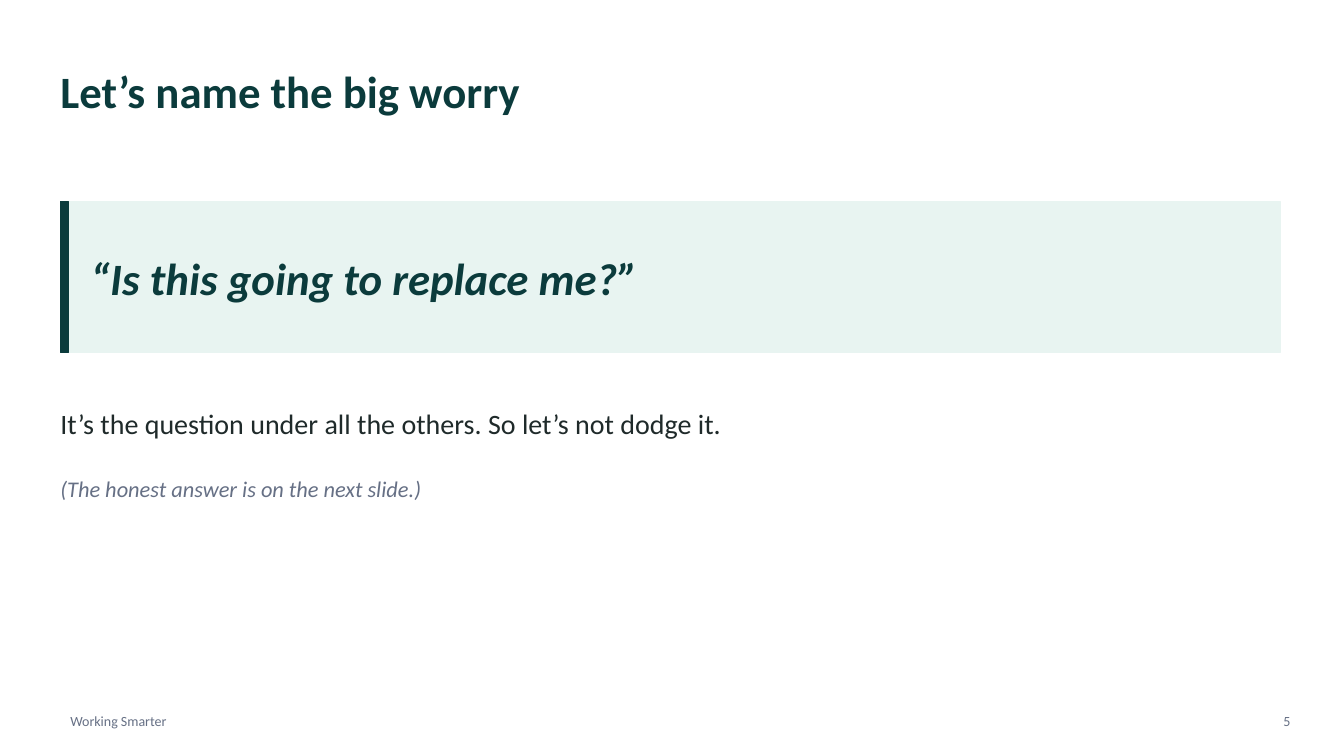
"""Build the slide that names the big worry."""
from dataclasses import dataclass

from pptx import Presentation
from pptx.dml.color import RGBColor
from pptx.enum import shapes, text
from pptx.util import Pt

COLORS = {"dark": "0B3B3C", "pale": "E8F4F1", "ink": "1F2A2A", "muted": "667085"}
LEFT, WIDTH = 43.2, 871.2
QUOTE_TOP, QUOTE_HEIGHT = 144, 108
NO_INSET = (0, 0)
FOOTER_INSET = (7.2, 3.6)


@dataclass(frozen=True)
class Box:
    """A place on the slide, in points."""
    left: float
    top: float
    width: float
    height: float

    def lengths(self) -> list[int]:
        """Return the place as lengths."""
        return [Pt(v) for v in (self.left, self.top, self.width, self.height)]


@dataclass(frozen=True)
class Label:
    """A line of text with its place and look."""
    words: str
    box: Box
    size: float
    color: str
    bold: bool = False
    italic: bool = False
    inset: tuple[float, float] = NO_INSET
    align: text.PP_ALIGN = text.PP_ALIGN.LEFT


@dataclass(frozen=True)
class Panel:
    """A filled rectangle."""
    box: Box
    color: str


TITLE = Label("Let’s name the big worry", Box(LEFT, 32.4, WIDTH, 64.8), 32, "dark", bold=True)
PANELS = [
    Panel(Box(LEFT, QUOTE_TOP, WIDTH, QUOTE_HEIGHT), "pale"),
    Panel(Box(LEFT, QUOTE_TOP, 5.76, QUOTE_HEIGHT), "dark"),
]
LABELS = [
    Label("“Is this going to replace me?”", Box(64.8, QUOTE_TOP, 842.4, QUOTE_HEIGHT),
          32, "dark", bold=True, italic=True),
    Label("It’s the question under all the others. So let’s not dodge it.",
          Box(LEFT, 280.8, WIDTH, 43.2), 20, "ink"),
    Label("(The honest answer is on the next slide.)",
          Box(LEFT, 331.2, WIDTH, 36), 16, "muted", italic=True),
    Label("Working Smarter", Box(LEFT, 504, 288, 21.6), 10, "muted", inset=FOOTER_INSET),
    Label("5", Box(892.8, 504, 36, 21.6), 10, "muted", inset=FOOTER_INSET,
          align=text.PP_ALIGN.RIGHT),
]


def apply(target: object, values: dict[str, object]) -> None:
    """Set each named attribute on the target."""
    for name, value in values.items():
        setattr(target, name, value)


def write_label(sp, label: Label) -> None:
    """Place a text shape and fill it with the label."""
    apply(sp, dict(zip(("left", "top", "width", "height"), label.box.lengths())))
    side, edge = map(Pt, label.inset)
    tf = sp.text_frame
    apply(tf, {
        "word_wrap": True,
        "auto_size": text.MSO_AUTO_SIZE.NONE,
        "vertical_anchor": text.MSO_ANCHOR.MIDDLE,
        "margin_left": side, "margin_right": side,
        "margin_top": edge, "margin_bottom": edge,
    })
    p = tf.paragraphs[0]
    p.alignment = label.align
    r = p.add_run()
    r.text = label.words
    apply(r.font, {"name": "Calibri", "size": Pt(label.size),
                   "bold": label.bold, "italic": label.italic})
    r.font.color.rgb = RGBColor.from_string(COLORS[label.color])


def draw_panel(s, panel: Panel) -> None:
    """Draw a rectangle with a line of its own colour."""
    sp = s.shapes.add_shape(shapes.MSO_SHAPE.RECTANGLE, *panel.box.lengths())
    color = RGBColor.from_string(COLORS[panel.color])
    sp.shadow.inherit = False
    sp.fill.solid()
    sp.fill.fore_color.rgb = color
    sp.line.color.rgb = color
    sp.line.width = Pt(1)


def main() -> None:
    """Build and save the slide."""
    prs = Presentation()
    apply(prs, {"slide_width": Pt(960), "slide_height": Pt(540)})
    s = prs.slides.add_slide(prs.slide_layouts.get_by_name("Title Only"))
    write_label(s.shapes.title, TITLE)
    for panel in PANELS:
        draw_panel(s, panel)
    for label in LABELS:
        write_label(s.shapes.add_textbox(*label.box.lengths()), label)
    prs.save("out.pptx")


if __name__ == "__main__":
    main()
